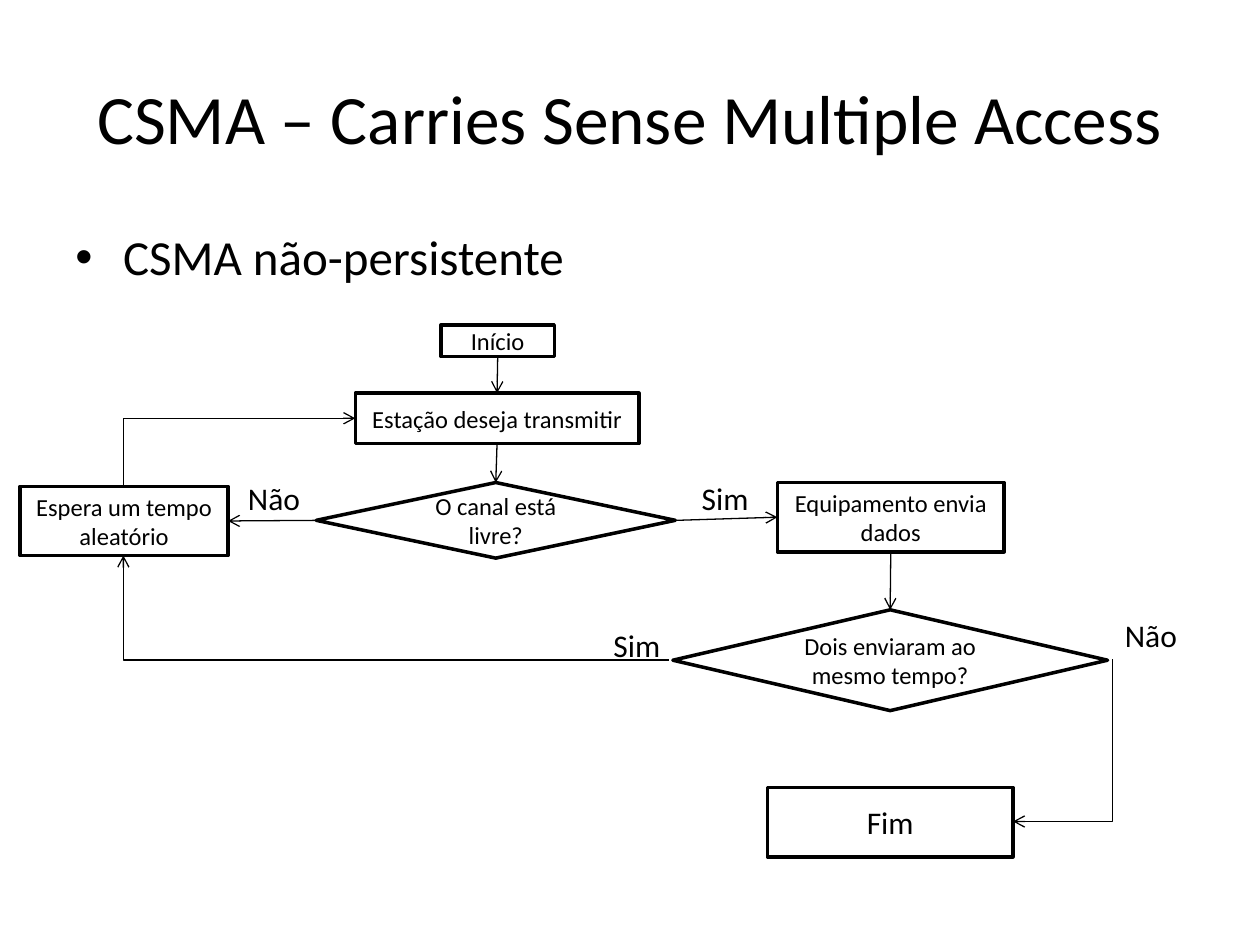
"""Build a slide with a flow chart of non-persistent CSMA."""
import dataclasses

import pptx
import pptx.dml.color
import pptx.enum.shapes
import pptx.enum.text
import pptx.util
from pptx.oxml.ns import qn
from lxml import etree

KIND = pptx.enum.shapes.MSO_SHAPE
WIRE = pptx.enum.shapes.MSO_CONNECTOR
ALIGN = pptx.enum.text.PP_ALIGN
ANCHOR = pptx.enum.text.MSO_ANCHOR
TOP, LEFT, BOTTOM, RIGHT = range(4)


@dataclasses.dataclass(frozen=True)
class Theme:
    """Hold the colours, type sizes, line widths and grid cell."""
    font: str = "Calibri"
    ink: str = "000000"
    paper: str = "FFFFFF"
    title: float = 39.6
    body: float = 28
    label: float = 18
    step: float = 14
    edge: float = 2
    wire: float = 0.75
    cell: float = 0.1


THEME = Theme()


def color(code):
    """Turn a hex code into a colour."""
    return pptx.dml.color.RGBColor.from_string(code)


def grid(*cells):
    """Turn columns and rows of the grid into lengths."""
    return [pptx.util.Inches(n * THEME.cell) for n in cells]


def write(shape, text, size, align=ALIGN.LEFT, anchor=ANCHOR.TOP):
    """Put one styled paragraph in a shape and return it."""
    frame = shape.text_frame
    frame.text = text
    frame.word_wrap = True
    frame.auto_size = pptx.enum.text.MSO_AUTO_SIZE.NONE
    frame.vertical_anchor = anchor
    para = frame.paragraphs[0]
    para.alignment = align
    para.font.name = THEME.font
    para.font.size = pptx.util.Pt(size)
    para.font.color.rgb = color(THEME.ink)
    return para


def head(slide, text, box):
    """Place and fill the title."""
    title = slide.shapes.title
    title.left, title.top, title.width, title.height = grid(*box)
    write(title, text, THEME.title, ALIGN.CENTER, ANCHOR.MIDDLE)


def note(slide, text, box, size=THEME.label):
    """Add a text box and return its paragraph."""
    return write(slide.shapes.add_textbox(*grid(*box)), text, size)


def bullet(para, indent):
    """Give a paragraph a hanging bullet."""
    props = para._p.get_or_add_pPr()
    props.set("marL", str(indent))
    props.set("indent", str(-indent))
    etree.SubElement(props, qn("a:buFont"), typeface="Arial")
    etree.SubElement(props, qn("a:buChar"), char="•")


def step(slide, text, box, kind=KIND.RECTANGLE, size=THEME.step):
    """Add an outlined step of the flow chart."""
    shape = slide.shapes.add_shape(kind, *grid(*box))
    shape.shadow.inherit = False
    shape.fill.solid()
    shape.fill.fore_color.rgb = color(THEME.paper)
    shape.line.color.rgb = color(THEME.ink)
    shape.line.width = pptx.util.Pt(THEME.edge)
    write(shape, text, size, ALIGN.CENTER, ANCHOR.MIDDLE)
    return shape


def ink(wire, end):
    """Style a connector and put an arrow on one end."""
    wire.line.color.rgb = color(THEME.ink)
    wire.line.width = pptx.util.Pt(THEME.wire)
    etree.SubElement(wire.line._get_or_add_ln(), qn(f"a:{end}"), type="arrow")
    etree.SubElement(wire.element.spPr, qn("a:effectLst"))


def link(slide, start, out, stop, into):
    """Join two steps with a straight arrow."""
    wire = slide.shapes.add_connector(WIRE.STRAIGHT, 0, 0, 0, 0)
    wire.begin_connect(start, out)
    wire.end_connect(stop, into)
    ink(wire, "tailEnd")


def bend(slide, flat, tall, end):
    """Draw a one-corner arrow that leaves its first point sideways."""
    wire = slide.shapes.add_connector(WIRE.ELBOW, *grid(*flat, *tall))
    wire.element.spPr.find(qn("a:prstGeom")).set("prst", "bentConnector2")
    ink(wire, end)


def chart(slide):
    """Draw the steps, their arrows and the answers."""
    start = step(slide, "Início", (35, 25.8, 9, 2.5))
    wish = step(slide, "Estação deseja transmitir", (28.2, 31.2, 22.5, 4))
    free = step(slide, "O canal está livre?", (25.1, 38.3, 28.5, 6), KIND.DIAMOND)
    wait = step(slide, "Espera um tempo aleatório", (1.6, 38.6, 16.5, 5.5))
    send = step(slide, "Equipamento envia dados", (61.7, 38.3, 18, 5.5))
    clash = step(slide, "Dois enviaram ao mesmo tempo?",
                 (53.4, 48.4, 34.5, 8), KIND.DIAMOND)
    step(slide, "Fim", (60.9, 62.5, 19.5, 5.5), size=THEME.label)

    for text, left, top, width in (("Sim", 54.7, 37.5, 7.8), ("Não", 18.7, 37.5, 6.3),
                                   ("Sim", 47.7, 49.2, 7.8), ("Não", 88.3, 48.4, 6.3)):
        note(slide, text, (left, top, width, 4))

    for ends in ((start, BOTTOM, wish, TOP), (wish, BOTTOM, free, TOP),
                 (free, RIGHT, send, LEFT), (free, LEFT, wait, RIGHT),
                 (send, BOTTOM, clash, TOP)):
        link(slide, *ends)

    bend(slide, (53.1, 52.4), (9.8, 44.1), "tailEnd")
    bend(slide, (80.4, 65.2), (88.3, 52.3), "headEnd")
    bend(slide, (28.2, 33.2), (9.8, 38.6), "headEnd")


def main():
    """Build and save the slide."""
    deck = pptx.Presentation()
    deck.slide_width, deck.slide_height = grid(100, 75)
    slide = deck.slides.add_slide(deck.slide_layouts.get_by_name("Title Only"))
    head(slide, "CSMA – Carries Sense Multiple Access", (5, 3, 90, 12.5))
    para = note(slide, "CSMA não-persistente", (5, 17.5, 90, 49.5), THEME.body)
    para.space_before = pptx.util.Pt(THEME.body * 0.2)
    bullet(para, grid(3.8)[0])
    chart(slide)
    deck.save("out.pptx")


if __name__ == "__main__":
    main()
